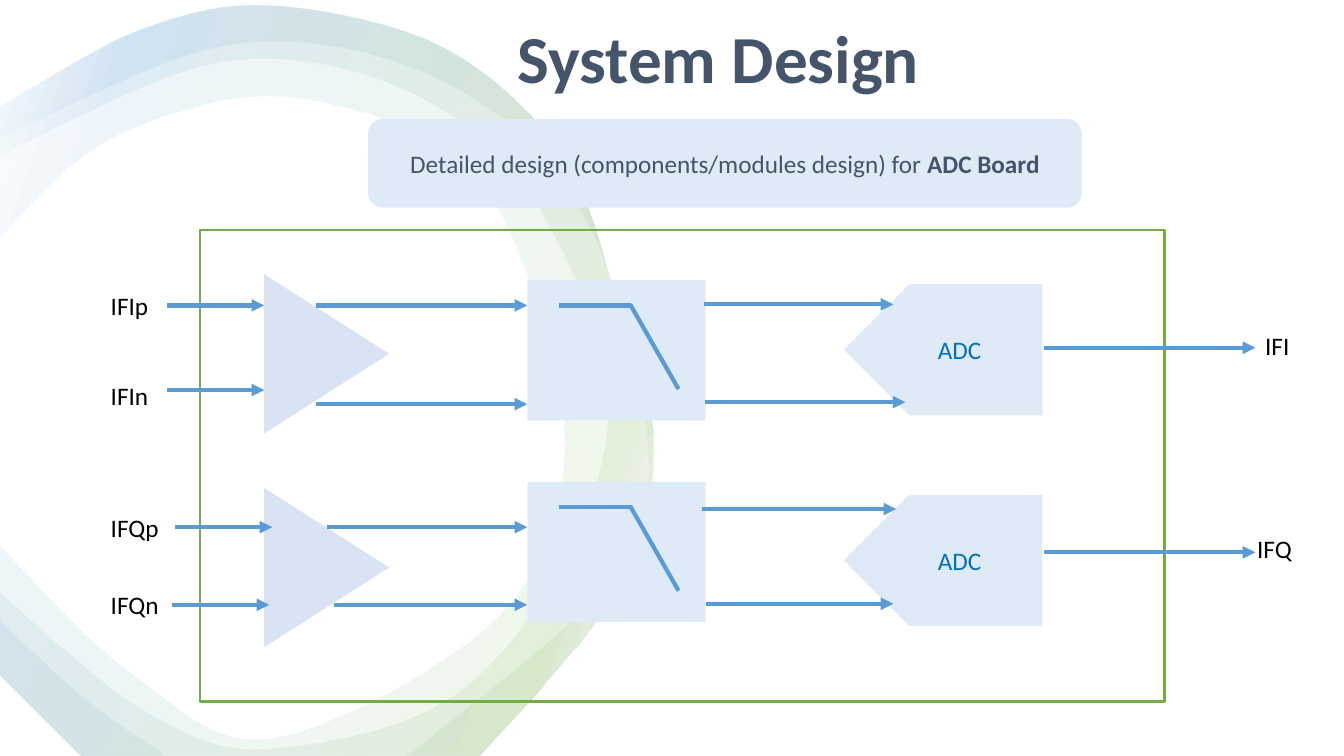
import pptx
import pptx.util
import pptx.oxml
import pptx.oxml.ns
import pptx.dml.color
import pptx.enum.shapes
import pptx.enum.text
from pptx.util import Inches

RGBColor = pptx.dml.color.RGBColor
MSO_SHAPE = pptx.enum.shapes.MSO_SHAPE
qn = pptx.oxml.ns.qn
DRAWING_NS = pptx.oxml.ns.nsdecls("a")

WHITE = RGBColor(0xFF, 0xFF, 0xFF)
BLACK = RGBColor(0x00, 0x00, 0x00)
SLATE = RGBColor(0x44, 0x54, 0x6A)
PALE_BLUE = RGBColor(0xDE, 0xEB, 0xF7)
LAVENDER = RGBColor(0xDA, 0xE3, 0xF3)
BLUE = RGBColor(0x5B, 0x9B, 0xD5)
ADC_BLUE = RGBColor(0x00, 0x70, 0xC0)
GREEN = RGBColor(0x70, 0xAD, 0x47)
RING_STOPS = [(2, WHITE), (16, GREEN), (85, BLUE), (100, WHITE)]

deck = pptx.Presentation()
deck.slide_width = Inches(13.33)
deck.slide_height = Inches(7.5)
page = deck.slides.add_slide(deck.slide_layouts[5])


def add_block(shapes, kind, left, top, width, height, fill=None):
    block = shapes.add_shape(kind, Inches(left), Inches(top), Inches(width), Inches(height))
    block.shadow.inherit = False
    block.line.fill.background()
    if fill is None:
        block.fill.background()
    else:
        block.fill.solid()
        block.fill.fore_color.rgb = fill
    return block


def add_wire(shapes, x1, y1, x2, y2, arrow=True):
    wire = shapes.add_connector(pptx.enum.shapes.MSO_CONNECTOR.STRAIGHT,
                                Inches(x1), Inches(y1), Inches(x2), Inches(y2))
    wire.line.color.rgb = BLUE
    wire.line.width = pptx.util.Pt(3)
    if arrow:
        head = pptx.oxml.parse_xml(f'<a:tailEnd {DRAWING_NS} type="triangle"/>')
        wire.element.spPr.find(qn("a:ln")).append(head)
    wire.element.spPr.append(pptx.oxml.parse_xml(f"<a:effectLst {DRAWING_NS}/>"))


backdrop = add_block(page.shapes, MSO_SHAPE.RECTANGLE, 0, 0, 13.33, 7.5, WHITE)
title = page.shapes.title
backdrop.element.addnext(title.element)
title.left, title.top, title.width, title.height = Inches(3.11), Inches(0), Inches(8.03), Inches(1.23)
title.text_frame.vertical_anchor = pptx.enum.text.MSO_ANCHOR.MIDDLE
title.text_frame.paragraphs[0].line_spacing = 0.9

outer_edge = [(0, 1.05), (1.38, 0.3), (2.7, 0.06), (4.41, 0.48), (5.58, 1.55), (6.1, 2.95),
              (6.48, 4.45), (6.05, 5.95), (4.75, 7.5)]
tail_edge = [(0.8, 7.5), (0, 6.7)]
wide_inner = [(0, 5.88), (1.4, 7.03), (2.7, 7.42), (4.72, 6.73), (6, 4.43), (5.47, 2.29),
              (4.16, 0.96), (2.2, 0.61), (0, 1.55)]
deep_inner = [(0, 5.42), (1.3, 6.68), (2.7, 7.32), (4.93, 6.12), (5.6, 4.4), (5.01, 2.21),
              (4.2, 1.36), (2.61, 0.95), (1, 1.43), (0, 2.36)]
thin_inner = [(4.02, 7.5), (5.94, 5.86), (6.42, 4.48), (5.78, 2.13), (4.36, 0.79),
              (2.3, 0.44), (0, 1.37)]
thin_tail = [(0, 6.15), (0.8, 6.9), (1.66, 7.5)]
ring_bands = [
    [[outer_edge, tail_edge, wide_inner]],
    [[outer_edge, tail_edge, deep_inner]],
    [[outer_edge, thin_inner], [thin_tail, tail_edge]],
]
stops = "".join(f'<a:gs pos="{place * 1000}"><a:srgbClr val="{color}"><a:alpha val="10000"/>'
                f"</a:srgbClr></a:gs>" for place, color in RING_STOPS)
ring = page.shapes.add_group_shape()
for contours in ring_bands:
    builder = None
    for curves in contours:
        outline = []
        for knots in curves:
            padded = [knots[0]] + knots + [knots[-1]]
            for corners in zip(padded, padded[1:], padded[2:], padded[3:]):
                for step in range(8):
                    t = step / 8
                    outline.append(tuple(
                        Inches(b + t * (c - a) / 2 + t**2 * (2 * a - 5 * b + 4 * c - d) / 2
                               + t**3 * (3 * b - a - 3 * c + d) / 2)
                        for a, b, c, d in zip(*corners)))
            outline.append(tuple(Inches(value) for value in knots[-1]))
        if builder is None:
            builder = ring.shapes.build_freeform(*outline[0])
        else:
            builder.move_to(*outline[0])
        builder.add_line_segments(outline[1:], close=True)
    band = builder.convert_to_shape()
    band.shadow.inherit = False
    band.line.fill.background()
    gradient = pptx.oxml.parse_xml(f"<a:gradFill {DRAWING_NS}><a:gsLst>{stops}</a:gsLst>"
                                   f'<a:lin ang="{200 * 60000}" scaled="0"/></a:gradFill>')
    band.element.spPr.find(qn("a:custGeom")).addnext(gradient)

banner = add_block(page.shapes, MSO_SHAPE.ROUNDED_RECTANGLE, 3.65, 1.18, 7.08, 0.88, PALE_BLUE)
board = add_block(page.shapes, MSO_SHAPE.RECTANGLE, 1.98, 2.28, 9.57, 4.68)
board.line.color.rgb = GREEN
board.line.width = pptx.util.Pt(1.5)

texts = [
    (title, [("System Design", True)], 48, SLATE),
    (banner, [("Detailed design (components/modules design) for ", False), ("ADC Board", True)], 18, SLATE),
]

for amplifier_top, filter_top, adc_top in [(2.89, 2.78, 2.82), (5.01, 4.78, 4.91)]:
    amplifier = add_block(page.shapes, MSO_SHAPE.ISOSCELES_TRIANGLE, 2.45, amplifier_top, 1.58, 1.24, LAVENDER)
    amplifier.rotation = 90
    low_pass = page.shapes.add_group_shape()
    add_block(low_pass.shapes, MSO_SHAPE.RECTANGLE, 5.23, filter_top, 1.77, 1.39, PALE_BLUE)
    add_wire(low_pass.shapes, 5.54, filter_top + 0.25, 6.26, filter_top + 0.25, arrow=False)
    add_wire(low_pass.shapes, 6.25, filter_top + 0.24, 6.73, filter_top + 1.08, arrow=False)
    adc = add_block(page.shapes, MSO_SHAPE.PENTAGON, 8.37, adc_top, 1.97, 1.3, PALE_BLUE)
    adc.element.spPr.find(qn("a:xfrm")).set("flipH", "1")
    texts.append((adc, [("ADC", False)], 18, ADC_BLUE))

for wire_y, amplifier_x, filter_y, filter_x, adc_x in [
    (3.03, 3.13, 3.02, 6.98, 8.86), (4.01, 3.13, 3.99, 6.99, 8.98),
    (5.23, 3.24, 5.05, 6.96, 8.89), (6, 3.31, 5.99, 7, 8.86),
]:
    add_wire(page.shapes, amplifier_x, wire_y, 5.23, wire_y)
    add_wire(page.shapes, filter_x, filter_y, adc_x, filter_y)

for name, left, top, width, start_x, end_x, wire_y in [
    ("IFIp", 1, 2.83, 0.66, 1.66, 2.62, 3.03), ("IFIn", 1, 3.72, 0.66, 1.66, 2.62, 3.87),
    ("IFQp", 1, 5.03, 0.74, 1.74, 2.7, 5.23), ("IFQn", 1, 5.8, 0.74, 1.71, 2.67, 6),
    ("IFI", 12.45, 3.23, 0.66, 10.35, 12.45, 3.45), ("IFQ", 12.37, 5.24, 0.74, 10.35, 12.45, 5.48),
]:
    add_wire(page.shapes, start_x, wire_y, end_x, wire_y)
    label = page.shapes.add_textbox(Inches(left), Inches(top), Inches(width), Inches(0.4))
    label.text_frame.word_wrap = True
    label.text_frame.auto_size = pptx.enum.text.MSO_AUTO_SIZE.SHAPE_TO_FIT_TEXT
    texts.append((label, [(name, False)], 18, BLACK))

for box, spans, size, color in texts:
    para = box.text_frame.paragraphs[0]
    para.alignment = pptx.enum.text.PP_ALIGN.LEFT if color == BLACK else pptx.enum.text.PP_ALIGN.CENTER
    for words, bold in spans:
        span = para.add_run()
        span.text = words
        span.font.name = "Calibri"
        span.font.size = pptx.util.Pt(size)
        span.font.bold = bold
        span.font.color.rgb = color

deck.save("out.pptx")
